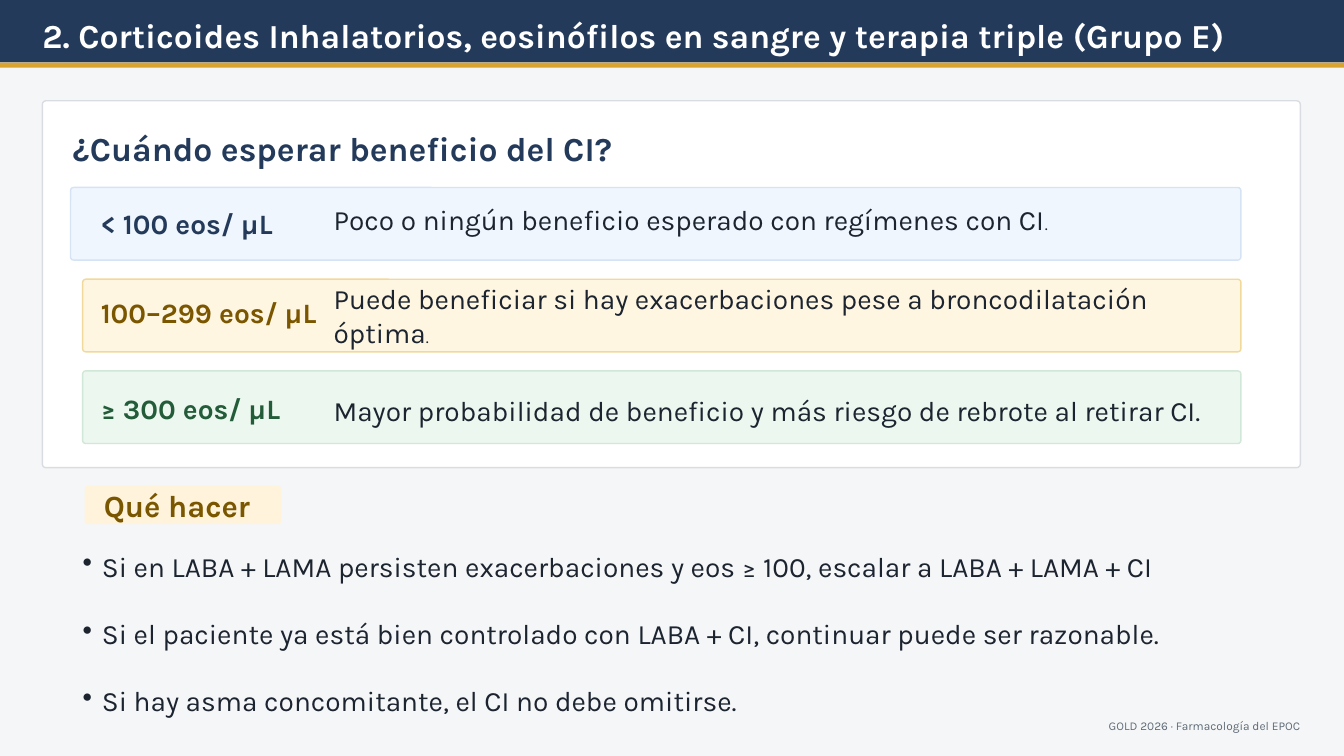
from dataclasses import dataclass

from lxml.etree import SubElement
from pptx import Presentation
from pptx.dml.color import RGBColor
from pptx.enum.shapes import MSO_SHAPE as Preset
from pptx.enum.text import MSO_ANCHOR as Anchor, PP_ALIGN as Align
from pptx.oxml.ns import qn
from pptx.util import Inches, Pt

CELL = Inches(0.1)
COLUMNS, ROWS = 133.33, 75


@dataclass(frozen=True)
class Theme:
    """Colours and type sizes of the slide."""
    font: str = "Karla"
    page: str = "F5F6F7"
    navy: str = "243A5A"
    gold: str = "D8A32F"
    white: str = "FFFFFF"
    card_line: str = "D9DDE3"
    ink: str = "1C2430"
    muted: str = "5F6B78"
    amber: str = "7A5600"
    amber_tint: str = "FFF4DB"
    heading: float = 24
    subheading: float = 22
    body: float = 20
    full_stop: float = 12
    footer: float = 8.5


THEME = Theme()


@dataclass(frozen=True)
class Box:
    """A rectangle measured in grid columns and rows."""
    left: float
    top: float
    width: float
    height: float

    def inner(self, left, top, width, height):
        """Return a box placed relative to this one."""
        return Box(self.left + left, self.top + top, width, height)

    def emu(self):
        """Return left, top, width and height in slide units."""
        return [round(side * CELL) for side in (self.left, self.top, self.width, self.height)]


@dataclass(frozen=True)
class Threshold:
    """One eosinophil range with its advice, colours and text offsets."""
    count: str
    advice: str
    ink: str
    fill: str
    line: str
    indent: float = 1.2
    count_shift: float = 0
    advice_shift: float = 0
    stop: str = ""


THRESHOLDS = [
    Threshold("< 100 eos/ µL", "Poco o ningún beneficio esperado con regímenes con CI",
              THEME.navy, "F0F6FE", "D5E3F5", indent=0, advice_shift=-0.45, stop="."),
    Threshold("100–299 eos/ µL",
              "Puede beneficiar si hay exacerbaciones pese a broncodilatación óptima",
              THEME.amber, "FFF6E1", "F0D99A", count_shift=-0.3, stop="."),
    Threshold("≥ 300 eos/ µL",
              "Mayor probabilidad de beneficio y más riesgo de rebrote al retirar CI.",
              "235C39", "ECF7EF", "D1E7D8", count_shift=0.1, advice_shift=0.3),
]

ACTIONS = [
    "Si en LABA + LAMA persisten exacerbaciones y eos ≥ 100, escalar a LABA + LAMA + CI",
    "Si el paciente ya está bien controlado con LABA + CI, continuar puede ser razonable.",
    "Si hay asma concomitante, el CI no debe omitirse.",
]


def style(font, size, color, bold=False):
    """Apply the theme font with a size, colour and weight."""
    font.name, font.size, font.bold = THEME.font, Pt(size), bold
    font.color.rgb = RGBColor.from_string(color)


def add_panel(slide, box, fill, line=None, corner=None):
    """Draw a flat rectangle, rounded when a corner share is given."""
    preset = Preset.RECTANGLE if corner is None else Preset.ROUNDED_RECTANGLE
    panel = slide.shapes.add_shape(preset, *box.emu())
    panel.shadow.inherit = False
    panel.fill.solid()
    panel.fill.fore_color.rgb = RGBColor.from_string(fill)
    if corner is not None:
        panel.adjustments[0] = corner
    if line:
        panel.line.color.rgb = RGBColor.from_string(line)
        panel.line.width = Pt(1)
    else:
        panel.line.fill.background()


def add_frame(slide, box, anchor=Anchor.MIDDLE):
    """Return the wrapping text frame of a box without margins."""
    frame = slide.shapes.add_textbox(*box.emu()).text_frame
    frame.word_wrap = True
    frame.vertical_anchor = anchor
    frame.margin_left = frame.margin_right = frame.margin_top = frame.margin_bottom = 0
    return frame


def add_line(slide, box, words, size, color, bold=False, align=Align.LEFT):
    """Write one paragraph in a box and return it."""
    paragraph = add_frame(slide, box).paragraphs[0]
    paragraph.add_run().text = words
    paragraph.alignment = align
    style(paragraph.font, size, color, bold)
    return paragraph


def add_header(slide, box):
    """Draw the title band with its gold rule."""
    add_panel(slide, box, THEME.navy)
    add_line(slide, box.inner(4.2, 1.2, 122.4, 4.5),
             "2. Corticoides Inhalatorios, eosinófilos en sangre y terapia triple (Grupo E)",
             THEME.heading, THEME.white, bold=True)
    add_panel(slide, box.inner(0, box.height, box.width, 0.5), THEME.gold)


def add_threshold(slide, box, threshold):
    """Draw one coloured band with its range and advice."""
    band = box.inner(threshold.indent, 0, box.width - threshold.indent, box.height)
    add_panel(slide, band, threshold.fill, threshold.line, corner=0.042)
    add_line(slide, box.inner(3, threshold.count_shift, 23, box.height),
             threshold.count, THEME.body, threshold.ink, bold=True)
    advice = add_line(slide, box.inner(26.1, threshold.advice_shift, 89.7, box.height),
                      threshold.advice, THEME.body, THEME.ink)
    if threshold.stop:
        stop = advice.add_run()
        stop.text = threshold.stop
        stop.font.size = Pt(THEME.full_stop)


def add_benefit_card(slide, box):
    """Draw the card with its question and evenly spaced thresholds."""
    add_panel(slide, box, THEME.white, THEME.card_line, corner=0.01)
    add_line(slide, box.inner(3, 2.7, 119.4, 3.9), "¿Cuándo esperar beneficio del CI?",
             THEME.heading, THEME.navy, bold=True)
    for row, threshold in enumerate(THRESHOLDS):
        add_threshold(slide, box.inner(2.8, 8.6 + 9.1 * row, 116.1, 7.2), threshold)


def add_bullet(paragraph, hang):
    """Give a paragraph a hanging bullet."""
    properties = paragraph._p.get_or_add_pPr()
    properties.set("marL", str(hang))
    properties.set("indent", str(-hang))
    SubElement(properties, qn("a:buChar"), char="•")


def add_actions(slide, box):
    """Draw the tagged list of actions."""
    add_panel(slide, box.inner(0.2, 0, 19.5, 3.8), THEME.amber_tint, corner=0.083)
    add_line(slide, box.inner(2.1, 1.1, 15.9, 1.6), "Qué hacer",
             THEME.subheading, THEME.amber, bold=True)
    frame = add_frame(slide, box.inner(0, 6.3, box.width, box.height - 6.3), Anchor.TOP)
    for position, action in enumerate(ACTIONS):
        paragraph = frame.add_paragraph() if position else frame.paragraphs[0]
        paragraph.add_run().text = action
        add_bullet(paragraph, Inches(0.19))
        if position:
            paragraph.space_before = Pt(24)
        style(paragraph.font, THEME.body, THEME.ink)


def add_footer(slide, box):
    """Write the source line at the right."""
    add_line(slide, box, "GOLD 2026 · Farmacología del EPOC",
             THEME.footer, THEME.muted, align=Align.RIGHT)


def main():
    """Build and save the slide."""
    deck = Presentation()
    deck.slide_width, deck.slide_height = round(COLUMNS * CELL), ROWS * CELL
    slide = deck.slides.add_slide(deck.slide_layouts[6])
    slide.background.fill.solid()
    slide.background.fill.fore_color.rgb = RGBColor.from_string(THEME.page)
    add_header(slide, Box(0, 0, COLUMNS, 6.2))
    add_footer(slide, Box(102, 71.2, 27, 1.6))
    add_benefit_card(slide, Box(4.2, 10, 124.8, 36.4))
    add_actions(slide, Box(8.2, 48.2, 120.2, 23.1))
    deck.save("out.pptx")


if __name__ == "__main__":
    main()
